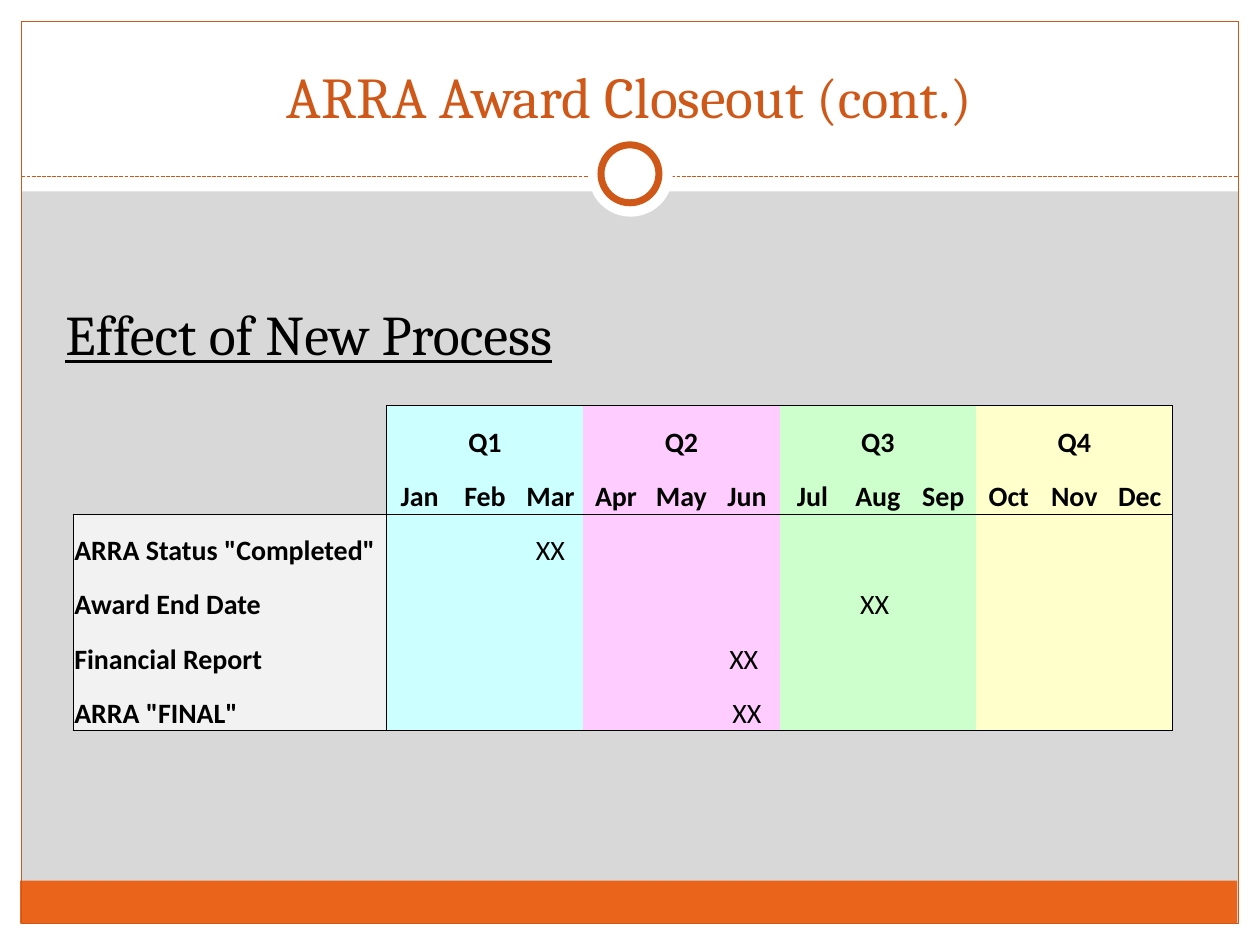
import pptx
import pptx.util
import pptx.dml.color
import pptx.enum.dml
import pptx.enum.shapes
import pptx.enum.text
import pptx.oxml.ns
import lxml.etree

Inches = pptx.util.Inches
Pt = pptx.util.Pt
RGB = pptx.dml.color.RGBColor.from_string
qn = pptx.oxml.ns.qn
kinds = pptx.enum.shapes.MSO_SHAPE
anchor = pptx.enum.text.MSO_ANCHOR
align = pptx.enum.text.PP_ALIGN

color = {
    "back": "D8D8D8", "white": "FFFFFF", "black": "000000",
    "band": "EB641B", "rust": "CF5818", "label": "F2F2F2",
    "Q1": "CCFFFF", "Q2": "FFCCFF", "Q3": "CCFFCC", "Q4": "FFFFCC",
}

deck = pptx.Presentation()
deck.slide_width, deck.slide_height = Inches(10), Inches(7.5)
slide = deck.slides.add_slide(deck.slide_layouts[6])
slide.background.fill.solid()
slide.background.fill.fore_color.rgb = RGB(color["back"])


def style(para, words, tone, **form):
    run = para.add_run()
    run.text = words
    run.font.color.rgb = RGB(color[tone])
    for key, value in form.items():
        setattr(run.font, key, value)


def draw(kind, box, fill=None, width=None):
    shape = slide.shapes.add_shape(kind, *map(Inches, box))
    shape.shadow.inherit = False
    if fill:
        shape.fill.solid()
        shape.fill.fore_color.rgb = RGB(color[fill])
    else:
        shape.fill.background()
    if width:
        shape.line.color.rgb = RGB(color["rust"])
        shape.line.width = Pt(width)
    else:
        shape.line.fill.background()


# White margins, bottom band and frame
for box in ((0, 7.33, 10, 0.17), (0, 0, 10, 1.52),
            (0, 0, 0.17, 7.5), (9.83, 0, 0.17, 7.5)):
    draw(kinds.RECTANGLE, box, "white")
draw(kinds.RECTANGLE, (0.16, 6.99, 9.66, 0.34), "band")
draw(kinds.RECTANGLE, (0.17, 0.17, 9.66, 7.16), width=0.75)

# Dashed rule with a ring on it
rule = slide.shapes.add_connector(
    pptx.enum.shapes.MSO_CONNECTOR.STRAIGHT,
    Inches(0.17), Inches(1.4), Inches(9.83), Inches(1.4))
rule.line.color.rgb = RGB(color["rust"])
rule.line.width = Pt(0.75)
rule.line.dash_style = pptx.enum.dml.MSO_LINE.SQUARE_DOT
props = rule.element.find(qn("p:spPr"))
lxml.etree.SubElement(props, qn("a:effectLst"))
draw(kinds.OVAL, (4.67, 1.05, 0.67, 0.67), "white")
draw(kinds.OVAL, (4.77, 1.15, 0.46, 0.46), "white", 4)

# Title and heading
title = slide.shapes.add_textbox(
    Inches(0.33), Inches(0.25), Inches(9.33), Inches(0.83)).text_frame
title.word_wrap = True
title.vertical_anchor = anchor.BOTTOM
para = title.paragraphs[0]
para.alignment = align.CENTER
style(para, "ARRA Award Closeout", "rust", name="Cambria", size=Pt(33))
style(para, " (cont.)", "rust", name="Cambria", size=Pt(32))

head = slide.shapes.add_textbox(
    Inches(0.42), Inches(2.33), Inches(4.12), Inches(0.64)).text_frame
head.word_wrap = False
head.auto_size = pptx.enum.text.MSO_AUTO_SIZE.SHAPE_TO_FIT_TEXT
style(head.paragraphs[0], "Effect of New Process", "black",
      name="Cambria", size=Pt(32), underline=True)

# Table text by row and column
months = "Jan Feb Mar Apr May Jun Jul Aug Sep Oct Nov Dec".split()
tasks = [('ARRA Status "Completed"', "Mar", "XX"),
         ("Award End Date", "Aug", "XX "),
         ("Financial Report", "Jun", "XX "),
         ('ARRA "FINAL"', "Jun", "XX")]
texts = {(0, 3 * i + 2): f"Q{i + 1}" for i in range(4)}
for col, month in enumerate(months, 1):
    texts[1, col] = month
for row, (task, month, mark) in enumerate(tasks, 2):
    texts[row, 0] = task
    texts[row, months.index(month) + 1] = mark

# Plain table without a style
rows, cols = len(tasks) + 2, len(months) + 1
frame = slide.shapes.add_table(
    rows, cols, Inches(0.58), Inches(3.22), Inches(8.75), Inches(2.58))
table = frame.table
table.first_row = table.horz_banding = False
plain = "{2D5ABB26-0587-4C30-8999-92F81FD0307C}"
frame.element.find(".//" + qn("a:tableStyleId")).text = plain
for col in range(cols):
    table.columns[col].width = Inches(0.52 if col else 2.49)
for row in range(rows):
    table.rows[row].height = Inches(0.43)

inset = {"margin_left": Inches(0.01), "margin_right": Inches(0.01),
         "margin_top": Inches(0.01), "margin_bottom": 0,
         "vertical_anchor": anchor.BOTTOM}
for row in range(rows):
    for col in range(cols):
        cell = table.cell(row, col)
        for key, value in inset.items():
            setattr(cell, key, value)
        corner = row < 2 and col == 0
        if corner:
            cell.fill.background()
        else:
            tone = f"Q{(col - 1) // 3 + 1}" if col else "label"
            cell.fill.solid()
            cell.fill.fore_color.rgb = RGB(color[tone])
        if (row, col) in texts:
            para = cell.text_frame.paragraphs[0]
            para.alignment = align.CENTER if col else align.LEFT
            style(para, texts[row, col], "black", name="Calibri",
                  size=Pt(16), bold=row < 2 or col == 0)

        # Lines around the header, the labels and the grid
        edges = {"lnL": col == 1 or (col == 0 and row > 1),
                 "lnR": col in (0, cols - 1),
                 "lnT": row == 2 or (row == 0 and col > 0),
                 "lnB": row in (1, rows - 1)}
        tcpr = cell._tc.get_or_add_tcPr()
        for spot, (tag, shown) in enumerate(edges.items()):
            edge = lxml.etree.Element(qn("a:" + tag), w=str(Pt(0.5)))
            if shown:
                paint = lxml.etree.SubElement(edge, qn("a:solidFill"))
                lxml.etree.SubElement(
                    paint, qn("a:srgbClr"), val=color["black"])
            else:
                lxml.etree.SubElement(edge, qn("a:noFill"))
            tcpr.insert(spot, edge)

deck.save("out.pptx")
